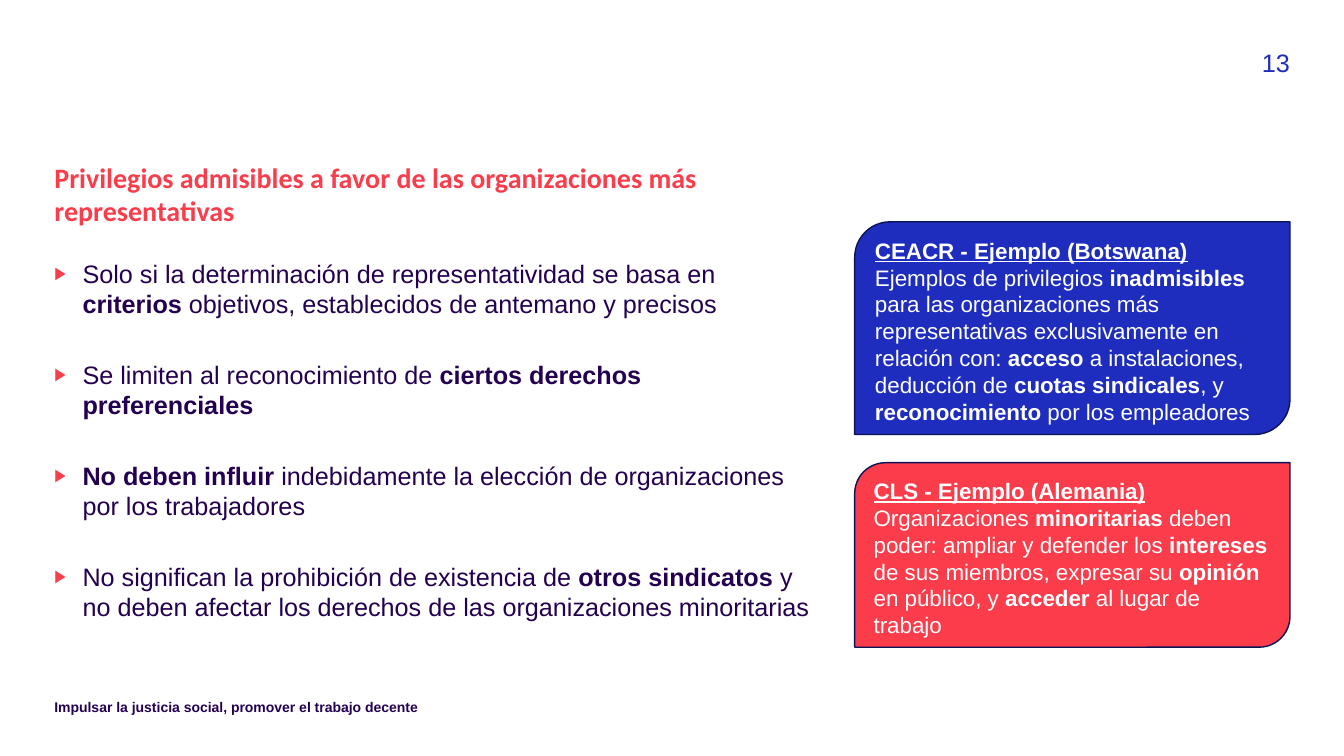
import pptx
import pptx.util
import pptx.dml.color
import pptx.enum.shapes
import pptx.enum.text
from lxml import etree
from pptx.oxml.ns import qn

Cm, Pt = pptx.util.Cm, pptx.util.Pt
RGBColor = pptx.dml.color.RGBColor
ALIGN = pptx.enum.text.PP_ALIGN
ANCHOR = pptx.enum.text.MSO_ANCHOR

RED = RGBColor(0xFA, 0x3C, 0x4B)
BLUE = RGBColor(0x1E, 0x2D, 0xBE)
PURPLE = RGBColor(0x23, 0x00, 0x50)
NAVY = RGBColor(0x0D, 0x14, 0x53)
WHITE = RGBColor(0xFF, 0xFF, 0xFF)

LEFT_MARGIN = Cm(1.37)
COLUMN_WIDTH = Cm(19.23)
CARD_LEFT, CARD_WIDTH = Cm(21.54), Cm(10.97)

# Double asterisks enclose bold words
CONDITIONS = [
    "Solo si la determinación de representatividad se basa en **criterios** "
    "objetivos, establecidos de antemano y precisos",
    "Se limiten al reconocimiento de **ciertos derechos preferenciales**",
    "**No deben influir** indebidamente la elección de organizaciones "
    "por los trabajadores",
    "No significan la prohibición de existencia de **otros sindicatos** y no "
    "deben afectar los derechos de las organizaciones minoritarias",
]
BOTSWANA = (
    "Ejemplos de privilegios **inadmisibles** para las organizaciones más "
    "representativas exclusivamente en relación con: **acceso** a "
    "instalaciones, deducción de **cuotas sindicales**, y "
    "**reconocimiento** por los empleadores"
)
GERMANY = (
    "Organizaciones **minoritarias** deben poder: ampliar y defender los "
    "**intereses** de sus miembros, expresar su **opinión** en público, "
    "y **acceder** al lugar de trabajo"
)


def write(paragraph, text, size, color, font="Arial", bold=False,
          underline=False, align=ALIGN.LEFT, before=0):
    """Fill a paragraph, switching bold at each pair of asterisks."""
    paragraph.alignment = align
    paragraph.space_before = Pt(before)
    for index, part in enumerate(text.split("**")):
        if not part:
            continue
        run = paragraph.add_run()
        run.text = part
        run.font.name = font
        run.font.size = Pt(size)
        run.font.color.rgb = color
        run.font.bold = bold or index % 2 == 1
        run.font.underline = underline


def prepare_frame(frame, anchor=ANCHOR.TOP):
    """Wrap the text and remove the insets."""
    frame.word_wrap = True
    frame.auto_size = pptx.enum.text.MSO_AUTO_SIZE.NONE
    frame.vertical_anchor = anchor
    frame.margin_left = frame.margin_right = 0
    frame.margin_top = frame.margin_bottom = 0
    return frame


def place(placeholder, left, top, width, height):
    placeholder.left, placeholder.top = left, top
    placeholder.width, placeholder.height = width, height
    return prepare_frame(placeholder.text_frame)


def add_bullet(paragraph):
    """Give a paragraph a small red triangle and a hanging indent."""
    properties = paragraph._p.get_or_add_pPr()
    properties.set("marL", str(Cm(0.71)))
    properties.set("indent", str(-Cm(0.71)))
    color = etree.SubElement(properties, qn("a:buClr"))
    etree.SubElement(color, qn("a:srgbClr"), val=str(RED))
    etree.SubElement(properties, qn("a:buSzPct"), val="70000")
    etree.SubElement(properties, qn("a:buFont"), typeface="Arial")
    etree.SubElement(properties, qn("a:buChar"), char="▶")


def add_label(slide, text, left, top, width, height, **style):
    label = slide.shapes.add_textbox(left, top, width, height)
    write(prepare_frame(label.text_frame).paragraphs[0], text, **style)


def add_example(slide, heading, text, top, height, fill):
    """Add a card with two rounded corners, an underlined heading and text."""
    card = slide.shapes.add_shape(
        pptx.enum.shapes.MSO_SHAPE.ROUND_2_DIAG_RECTANGLE,
        CARD_LEFT, top, CARD_WIDTH, height)
    card.shadow.inherit = False
    card.fill.solid()
    card.fill.fore_color.rgb = fill
    card.line.color.rgb = NAVY
    card.line.width = Pt(1)
    frame = prepare_frame(card.text_frame, ANCHOR.MIDDLE)
    frame.margin_left = frame.margin_right = Cm(0.25)
    frame.margin_top = Cm(0.14)
    write(frame.paragraphs[0], heading, 16, WHITE, bold=True, underline=True)
    write(frame.add_paragraph(), text, 16, WHITE)


def main():
    deck = pptx.Presentation()
    deck.slide_width, deck.slide_height = Cm(33.87), Cm(19.05)
    slide = deck.slides.add_slide(deck.slide_layouts[1])

    # Title
    title = place(slide.shapes.title, LEFT_MARGIN, Cm(4.04),
                  COLUMN_WIDTH, Cm(1.8))
    write(title.paragraphs[0],
          "Privilegios admisibles a favor de las organizaciones más "
          "representativas", 20, RED, font="Calibri", bold=True)

    # Conditions
    body = place(slide.placeholders[1], LEFT_MARGIN, Cm(6.5),
                 COLUMN_WIDTH, Cm(10.34))
    for index, condition in enumerate(CONDITIONS):
        paragraph = body.add_paragraph() if index else body.paragraphs[0]
        write(paragraph, condition, 18, PURPLE, before=29 if index else 0)
        add_bullet(paragraph)

    # Example cards
    add_example(slide, "CLS - Ejemplo (Alemania)", GERMANY,
                Cm(11.66), Cm(4.65), RED)
    add_example(slide, "CEACR - Ejemplo (Botswana)", BOTSWANA,
                Cm(5.59), Cm(5.36), BLUE)

    # Footer and page number
    add_label(slide, "Impulsar la justicia social, promover el trabajo decente",
              LEFT_MARGIN, Cm(17.6), Cm(15.57), Cm(0.51),
              size=10, color=PURPLE, bold=True)
    add_label(slide, "13", Cm(31.01), Cm(1.19), Cm(1.5), Cm(0.79),
              size=18, color=BLUE, align=ALIGN.RIGHT)

    deck.save("out.pptx")


if __name__ == "__main__":
    main()
